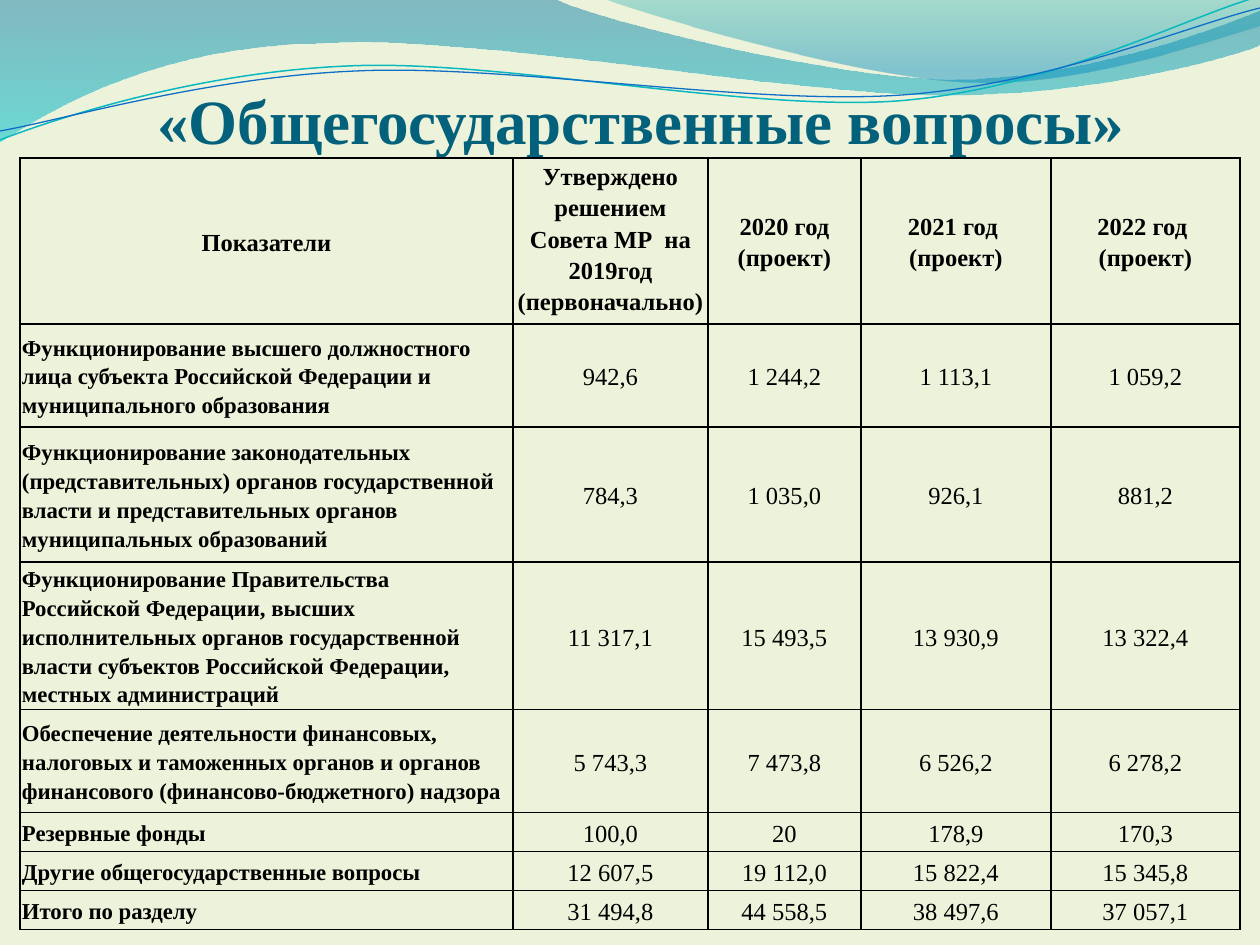
import math

from lxml import etree
from pptx import Presentation
from pptx import util as u
from pptx.dml.color import RGBColor
from pptx.enum import text
from pptx.oxml import ns

PX = 914400 / 126  # EMU per px
CENTER, LEFT = text.PP_ALIGN.CENTER, text.PP_ALIGN.LEFT
TOP, MIDDLE, BOTTOM = (text.MSO_ANCHOR.TOP, text.MSO_ANCHOR.MIDDLE,
                       text.MSO_ANCHOR.BOTTOM)


def px(value):
    return u.Emu(round(value * PX))


def color(value):
    return RGBColor.from_string(value)


def set_values(target, values):
    for name, value in values.items():
        setattr(target, name, value)


def add_child(parent, tag, **attributes):
    return etree.SubElement(parent, ns.qn(tag), attributes)


def turn(point, center, degrees):
    """The point turned clockwise around the center."""
    angle = math.radians(degrees)
    x, y = point[0] - center[0], point[1] - center[1]
    return (center[0] + x * math.cos(angle) - y * math.sin(angle),
            center[1] + x * math.sin(angle) + y * math.cos(angle))


class SlideBuilder:
    font = "Times New Roman"
    ink = "000000"

    def __init__(self, presentation, background):
        self.slide = presentation.slides.add_slide(presentation.slide_layouts[5])
        fill = self.slide.background.fill
        fill.solid()
        fill.fore_color.rgb = color(background)

    def outline(self, segments, closed):
        """Each segment is a tuple of points: one for a line, three for a curve."""
        start, *rest = [(px(x), px(y)) for segment in segments for x, y in segment]
        builder = self.slide.shapes.build_freeform(*start, scale=1.0)
        builder.add_line_segments(rest, close=closed)
        shape = builder.convert_to_shape()
        shape.shadow.inherit = False
        # Join each group of three points into one cubic curve
        lines = iter(list(shape._element.spPr.iter(ns.qn("a:lnTo"))))
        for segment in segments[1:]:
            first, *others = [next(lines) for _ in segment]
            if others:
                curve = etree.Element(ns.qn("a:cubicBezTo"))
                first.addprevious(curve)
                for line in (first, *others):
                    curve.append(line[0])
                    line.getparent().remove(line)
        return shape

    def wave(self, segments, stops):
        shape = self.outline(segments, True)
        shape.line.fill.background()
        shape.fill.gradient()
        shape.fill.gradient_angle = 270
        for stop, (position, rgb, _) in zip(shape.fill.gradient_stops, stops):
            stop.position = position
            stop.color.rgb = color(rgb)
        elements = shape._element.spPr.iter(ns.qn("a:srgbClr"))
        for element, (_, _, opacity) in zip(elements, stops):
            add_child(element, "a:alpha", val=str(opacity * 1000))

    def curve(self, segments, center, tilt, rgb, width):
        level = [tuple(turn(point, center, tilt) for point in segment)
                 for segment in segments]
        shape = self.outline(level, False)
        shape.rotation = -tilt
        shape.fill.background()
        shape.line.color.rgb = color(rgb)
        shape.line.width = u.Pt(width)

    def format_text(self, frame, size, bold, align, rgb, spacing=1.0):
        for paragraph in frame.paragraphs:
            set_values(paragraph, {"alignment": align, "line_spacing": spacing})
            for run in paragraph.runs:
                set_values(run.font, {"name": self.font, "size": u.Pt(size), "bold": bold})
                run.font.color.rgb = color(rgb)

    def title(self, words, box, size, rgb):
        shape = self.slide.shapes.title
        set_values(shape, dict(zip(("left", "top", "width", "height"), map(px, box))))
        frame = shape.text_frame
        frame.text = words
        set_values(frame, {"vertical_anchor": BOTTOM, "word_wrap": True,
                           "auto_size": text.MSO_AUTO_SIZE.NONE,
                           "margin_left": 0, "margin_right": 0,
                           "margin_top": px(6), "margin_bottom": 0})
        self.format_text(frame, size, True, CENTER, rgb)
        self.slide.shapes._spTree.append(shape._element)  # in front of the waves

    def borders(self, cell):
        properties = cell._tc.get_or_add_tcPr()
        for side in "LRTB":
            line = add_child(properties, f"a:ln{side}", w=str(u.Pt(1)))
            fill = add_child(line, "a:solidFill")
            add_child(fill, "a:srgbClr", val=self.ink)

    def table(self, left, top, widths, heights, rows):
        frame = self.slide.shapes.add_table(
            len(rows), len(widths), px(left), px(top), px(sum(widths)), px(sum(heights)))
        table = frame.table
        set_values(table, {"first_row": False, "horz_banding": False})
        for column, width in zip(table.columns, widths):
            column.width = px(width)
        for row, height in zip(table.rows, heights):
            row.height = px(height)
        margins = dict.fromkeys(
            ("margin_left", "margin_right", "margin_top", "margin_bottom"), px(2))
        for row, values in enumerate(rows):
            for column, value in enumerate(values):
                cell = table.cell(row, column)
                cell.text = value
                is_label = row > 0 and column == 0
                anchor = TOP if (row, column) == (0, 1) else MIDDLE
                set_values(cell, {"vertical_anchor": anchor, **margins})
                self.borders(cell)
                cell.fill.background()
                self.format_text(cell.text_frame, 13 if is_label else 14,
                                 row == 0 or is_label,
                                 LEFT if is_label else CENTER, self.ink, 1.15)


ROWS = [
    ("Показатели", "Утверждено решением Совета МР  на 2019год (первоначально)",
     "2020 год (проект)", "2021 год \n(проект)", "2022 год \n(проект)"),
    ("Функционирование высшего должностного лица субъекта Российской Федерации "
     "и муниципального образования", "942,6", "1 244,2", "1 113,1", "1 059,2"),
    ("Функционирование законодательных (представительных) органов государственной "
     "власти и представительных органов муниципальных образований",
     "784,3", "1 035,0", "926,1", "881,2"),
    ("Функционирование Правительства Российской Федерации, высших исполнительных "
     "органов государственной власти субъектов Российской Федерации, местных "
     "администраций", "11 317,1", "15 493,5", "13 930,9", "13 322,4"),
    ("Обеспечение деятельности финансовых, налоговых и таможенных органов и органов "
     "финансового (финансово-бюджетного) надзора",
     "5 743,3", "7 473,8", "6 526,2", "6 278,2"),
    ("Резервные фонды", "100,0", "20", "178,9", "170,3"),
    ("Другие общегосударственные вопросы",
     "12 607,5", "19 112,0", "15 822,4", "15 345,8"),
    ("Итого по разделу", "31 494,8", "44 558,5", "38 497,6", "37 057,1"),
]


def main():
    presentation = Presentation()
    set_values(presentation, {"slide_width": px(1260), "slide_height": px(945)})
    builder = SlideBuilder(presentation, "EDF3DB")

    # Waves along the top edge
    builder.wave([((0, 0),), ((554, -1),),
                  ((600, 21), (837, 79), (955, 79)),
                  ((1074, 79), (1207, 33), (1260, 11)),
                  ((1261, 45),),
                  ((1239, 55), (1096, 96), (940, 95)),
                  ((784, 94), (481, 35), (324, 43)),
                  ((163, 45), (58, 105), (-1, 142))],
                 [(0, "0074A1", 45), (1, "00C6CF", 55)])
    builder.wave([((604, -1),),
                  ((641, 14), (859, 78), (969, 82)),
                  ((1079, 87), (1211, 40), (1260, 26)),
                  ((1260, 0),)],
                 [(0, "00A1A9", 30), (0.8, "008BBF", 45)])

    # Thin tilted lines that follow the waves
    builder.curve([((0, 140),),
                   ((60, 117), (199, 72), (349, 66)),
                   ((498, 59), (747, 112), (898, 101)),
                   ((1050, 89), (1182, 19), (1257, -3))], (629, 72), 2.7, "0AB8BF", 0.85)
    builder.curve([((0, 131),),
                   ((59, 121), (207, 77), (357, 71)),
                   ((508, 64), (751, 106), (903, 95)),
                   ((1053, 84), (1186, 26), (1260, 8))], (630, 74), 2.7, "0F6FC6", 0.75)

    # Title and budget table
    builder.title("«Общегосударственные вопросы»", (69, 0, 1144, 157), 36, "04617B")
    builder.table(20, 158, (493, 195, 153, 190, 189),
                  (166, 103, 135, 135, 103, 39, 39, 39), ROWS)
    presentation.save("out.pptx")


if __name__ == "__main__":
    main()
